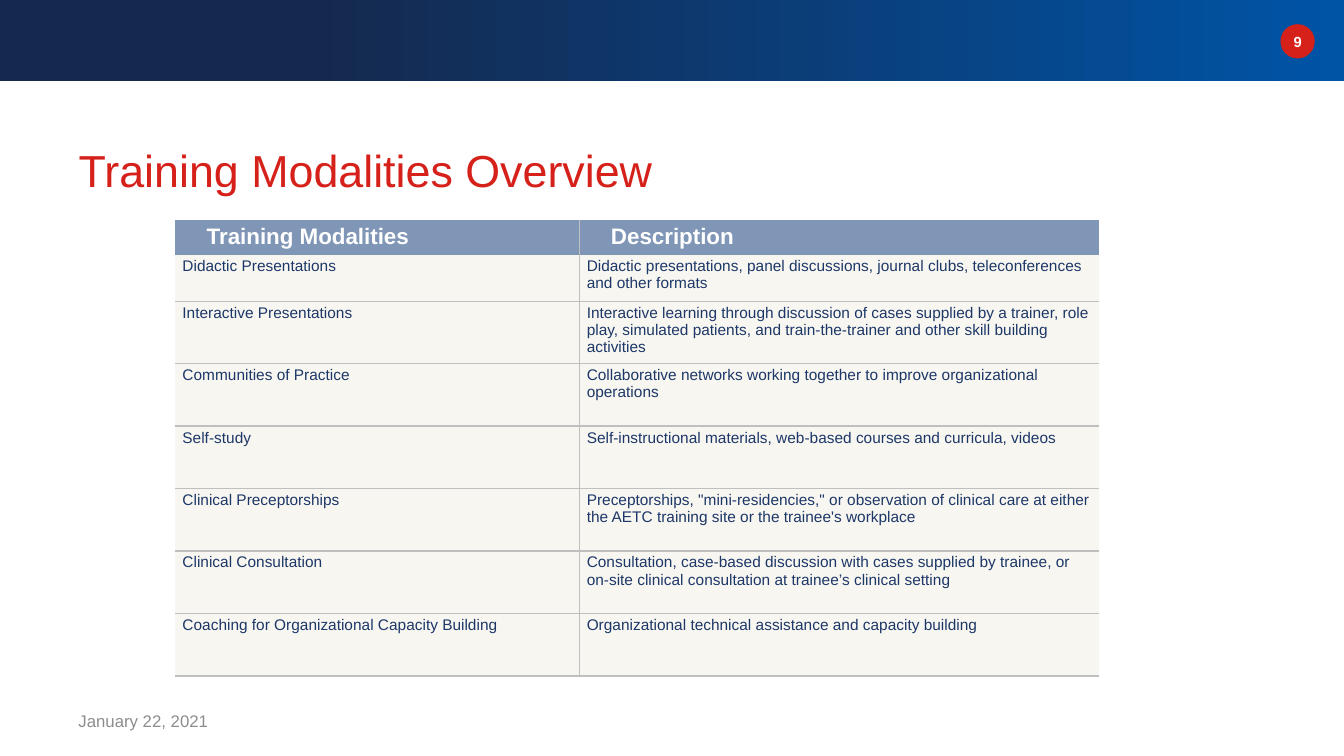
from typing import NamedTuple

from lxml.etree import SubElement
from pptx import Presentation
from pptx.dml.color import RGBColor
from pptx.enum.shapes import MSO_SHAPE as Preset
from pptx.enum.text import MSO_ANCHOR as Anchor, MSO_AUTO_SIZE as AutoSize, PP_ALIGN as Align
from pptx.oxml.ns import qn
from pptx.util import Inches, Pt

COLORS = {
    "navy": "15294E",
    "blue": "0054A6",
    "red": "D6201A",
    "white": "FFFFFF",
    "header": "8096B6",
    "cream": "F8F6F0",
    "text": "1C3768",
    "rule": "BFBFBF",
    "gray": "8D8D8D",
}


class Modality(NamedTuple):
    name: str
    description: str
    height: float


class CellStyle(NamedTuple):
    fill: str
    color: str
    size: float
    bold: bool
    side_margin: float
    end_margin: float
    anchor: Anchor
    line_spacing: float | None
    ruled_below: bool


HEADER = CellStyle("header", "white", 16, True, 0.31, 0.06, Anchor.MIDDLE, 16.4, False)
BODY = CellStyle("cream", "text", 11, False, 0.07, 0.03, Anchor.TOP, None, True)

MODALITIES = [
    Modality("Training Modalities", "Description", 0.25),
    Modality("Didactic Presentations", "Didactic presentations, panel discussions, journal clubs, teleconferences and other formats", 0.46),
    Modality("Interactive Presentations", "Interactive learning through discussion of cases supplied by a trainer, role play, simulated patients, and train-the-trainer and other skill building activities", 0.62),
    Modality("Communities of Practice", "Collaborative networks working together to improve organizational operations", 0.62),
    Modality("Self-study", "Self-instructional materials, web-based courses and curricula, videos", 0.62),
    Modality("Clinical Preceptorships", "Preceptorships, \"mini-residencies,\" or observation of clinical care at either the AETC training site or the trainee's workplace", 0.62),
    Modality("Clinical Consultation", "Consultation, case-based discussion with cases supplied by trainee, or on-site clinical consultation at trainee’s clinical setting", 0.62),
    Modality("Coaching for Organizational Capacity Building", "Organizational technical assistance and capacity building", 0.62),
]
COLUMN_WIDTHS = (4.01, 5.15)


def rgb(color: str) -> RGBColor:
    return RGBColor.from_string(COLORS[color])


def write(frame, text: str, size: float, color: str, bold: bool = False):
    frame.text = text
    frame.word_wrap = True
    paragraph = frame.paragraphs[0]
    font = paragraph.runs[0].font
    font.name = "Arial"
    font.size = Pt(size)
    font.bold = bold
    font.color.rgb = rgb(color)
    return paragraph


def add_plain_shape(slide, preset: Preset, left: float, top: float, width: float, height: float):
    shape = slide.shapes.add_shape(preset, Inches(left), Inches(top), Inches(width), Inches(height))
    shape.shadow.inherit = False
    shape.line.fill.background()
    return shape


def add_label(slide, text: str, left: float, top: float, width: float, height: float,
              size: float, color: str, bold: bool = False):
    label = slide.shapes.add_textbox(Inches(left), Inches(top), Inches(width), Inches(height))
    label.text_frame.vertical_anchor = Anchor.MIDDLE
    return write(label.text_frame, text, size, color, bold)


def set_borders(cell, ruled: set[str]) -> None:
    properties = cell._tc.get_or_add_tcPr()
    for side in ("L", "R", "T", "B"):
        border = SubElement(properties, qn(f"a:ln{side}"), w=str(Pt(1)))
        if side in ruled:
            fill = SubElement(border, qn("a:solidFill"))
            SubElement(fill, qn("a:srgbClr"), val=COLORS["rule"])
        else:
            SubElement(border, qn("a:noFill"))


def fill_cell(cell, text: str, style: CellStyle, ruled: set[str]) -> None:
    set_borders(cell, ruled)
    cell.fill.solid()
    cell.fill.fore_color.rgb = rgb(style.fill)
    cell.margin_left = cell.margin_right = Inches(style.side_margin)
    cell.margin_top = cell.margin_bottom = Inches(style.end_margin)
    cell.vertical_anchor = style.anchor
    paragraph = write(cell.text_frame, text, style.size, style.color, style.bold)
    if style.line_spacing:
        paragraph.line_spacing = Pt(style.line_spacing)


def add_modalities(slide) -> None:
    table = slide.shapes.add_table(
        len(MODALITIES), len(COLUMN_WIDTHS), Inches(1.74), Inches(2.18),
        Inches(sum(COLUMN_WIDTHS)), Inches(sum(row.height for row in MODALITIES)),
    ).table
    table.horz_banding = False
    for column, width in zip(table.columns, COLUMN_WIDTHS):
        column.width = Inches(width)
    for index, modality in enumerate(MODALITIES):
        table.rows[index].height = Inches(modality.height)
        style = BODY if index else HEADER
        rules = {"B"} if style.ruled_below else set()
        if index > 1:
            rules.add("T")
        fill_cell(table.cell(index, 0), modality.name, style, rules | {"R"})
        fill_cell(table.cell(index, 1), modality.description, style, rules | {"L"})


def add_banner(slide) -> None:
    banner = add_plain_shape(slide, Preset.RECTANGLE, 0, 0, 13.33, 0.8)
    banner.fill.gradient()
    banner.fill.gradient_angle = 0
    for stop, position, color in zip(banner.fill.gradient_stops, (0.23, 1), ("navy", "blue")):
        stop.position = position
        stop.color.rgb = rgb(color)
    badge = add_plain_shape(slide, Preset.OVAL, 12.7, 0.24, 0.34, 0.34)
    badge.fill.solid()
    badge.fill.fore_color.rgb = rgb("red")
    add_label(slide, "9", 12.65, 0.27, 0.44, 0.28, 10.5, "white", True).alignment = Align.CENTER


def add_title(slide) -> None:
    title = slide.shapes.title
    title.left, title.top = Inches(0.68), Inches(1.4)
    title.width, title.height = Inches(10.45), Inches(1.56)
    heading = write(title.text_frame, "Training Modalities Overview", 32, "red")
    heading.alignment = Align.LEFT
    heading.line_spacing = Pt(36)
    title.text_frame.vertical_anchor = Anchor.TOP
    title.text_frame.auto_size = AutoSize.NONE


def main() -> None:
    deck = Presentation()
    deck.slide_width, deck.slide_height = Inches(13.33), Inches(7.5)
    slide = deck.slides.add_slide(deck.slide_layouts[5])
    add_banner(slide)
    add_title(slide)
    add_modalities(slide)
    add_label(slide, "January 22, 2021", 0.68, 6.95, 3, 0.4, 12, "gray")
    deck.save("out.pptx")


if __name__ == "__main__":
    main()
